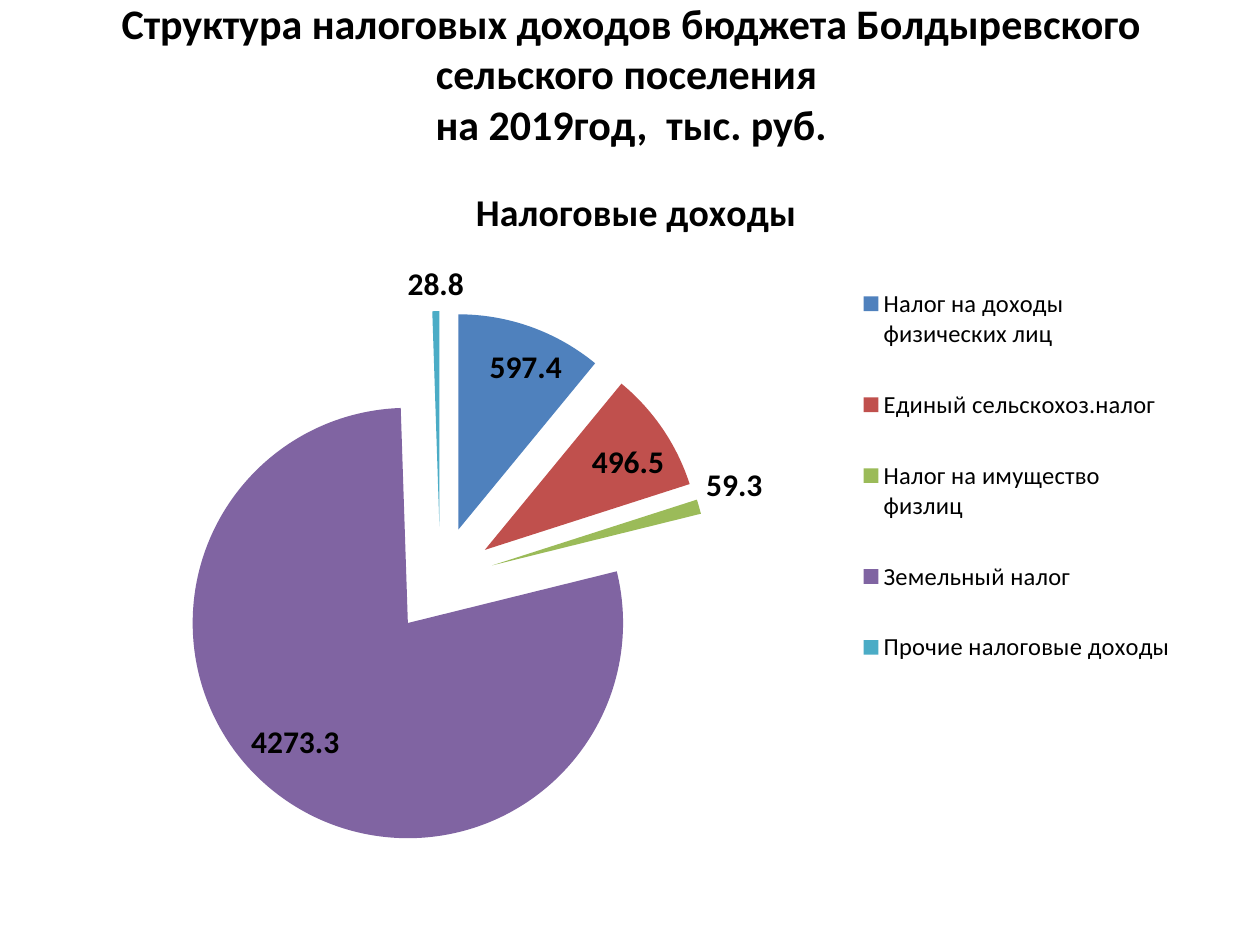
from dataclasses import dataclass

from lxml import etree
from pptx import Presentation
from pptx import util as u
from pptx.chart.data import CategoryChartData
from pptx.dml.color import RGBColor
from pptx.enum import chart as charts, text
from pptx.oxml.ns import qn

HEADING = ("Структура налоговых доходов бюджета Болдыревского сельского поселения \v"
           "на 2019год,  тыс. руб.")
CHART_TITLE = "Налоговые доходы"
TAXES = [
    ("Налог на доходы физических лиц", 597.4, "4F81BD"),
    ("Единый сельскохоз.налог", 496.5, "C0504D"),
    ("Налог на имущество физлиц", 59.3, "9BBB59"),
    ("Земельный налог", 4273.3, "8064A2"),
    ("Прочие налоговые доходы", 28.8, "4BACC6"),
]
EXPLOSION = 25

# left, top, width, height in inches; the last two count from the chart's corner
TITLE_BOX = (0.51, 0.2, 9, 0.76)
CHART_BOX = (0.55, 1.25, 9, 5.63)
PIE_AREA = (0.81, 1.22, 4.27, 4.27)
LEGEND_AREA = (6.26, 0.72, 2.52, 3.61)


@dataclass(frozen=True)
class Theme:
    font: str = "Calibri"
    ink: str = "000000"
    heading: float = 24
    chart_title: float = 21.6
    label: float = 18
    legend: float = 14


THEME = Theme()


def style(font, size, bold=False):
    font.name = THEME.font
    font.size = u.Pt(size)
    font.bold = bold
    font.color.rgb = RGBColor.from_string(THEME.ink)


def place(element, area, after=None, inner=False):
    """Fix a chart part at shares of the chart's size."""
    for old in element.findall(qn("c:layout")):
        element.remove(old)
    layout = etree.Element(qn("c:layout"))
    manual = etree.SubElement(layout, qn("c:manualLayout"))
    shares = [length / whole for length, whole in zip(area, CHART_BOX[2:] * 2)]
    settings = [("layoutTarget", "inner")] if inner else []
    settings += [("xMode", "edge"), ("yMode", "edge"), *zip("xywh", shares)]
    for tag, value in settings:
        etree.SubElement(manual, qn(f"c:{tag}")).set("val", str(value))
    if after is None:
        element.insert(0, layout)
    else:
        after.addnext(layout)


def add_heading(page):
    title = page.shapes.title
    title.left, title.top, title.width, title.height = map(u.Inches, TITLE_BOX)
    frame = title.text_frame
    frame.text = HEADING
    frame.word_wrap = True
    frame.auto_size = text.MSO_AUTO_SIZE.NONE
    frame.vertical_anchor = text.MSO_ANCHOR.MIDDLE
    para = frame.paragraphs[0]
    para.alignment = text.PP_ALIGN.CENTER
    for span in para.runs:
        style(span.font, THEME.heading, bold=True)


def add_pie(page):
    data = CategoryChartData(number_format="General")
    data.categories = [name for name, _, _ in TAXES]
    data.add_series(CHART_TITLE, [value for _, value, _ in TAXES])
    chart = page.shapes.add_chart(
        charts.XL_CHART_TYPE.PIE, *map(u.Inches, CHART_BOX), data).chart
    style(chart.font, THEME.label)

    chart.has_title = True
    frame = chart.chart_title.text_frame
    frame.text = CHART_TITLE
    style(frame.paragraphs[0].runs[0].font, THEME.chart_title, bold=True)
    chart.chart_title.include_in_layout = False

    chart.has_legend = True
    legend = chart.legend
    legend.position = charts.XL_LEGEND_POSITION.RIGHT
    legend.include_in_layout = False
    style(legend.font, THEME.legend)
    legend_xml = chart.element.find(f".//{qn('c:legend')}")
    place(legend_xml, LEGEND_AREA, after=legend_xml.find(qn("c:legendPos")))
    place(chart.element.find(f".//{qn('c:plotArea')}"), PIE_AREA, inner=True)

    plot = chart.plots[0]
    plot.vary_by_categories = True
    series = plot.series[0]
    for index, (_, _, color) in enumerate(TAXES):
        fill = series.points[index].format.fill
        fill.solid()
        fill.fore_color.rgb = RGBColor.from_string(color)
    explosion = etree.Element(qn("c:explosion"))
    explosion.set("val", str(EXPLOSION))
    series._element.find(qn("c:dPt")).addprevious(explosion)

    labels = series.data_labels
    labels.show_value = True
    labels.position = charts.XL_LABEL_POSITION.BEST_FIT
    style(labels.font, THEME.label, bold=True)


def main():
    deck = Presentation()
    deck.slide_width, deck.slide_height = u.Inches(10), u.Inches(7.5)
    page = deck.slides.add_slide(deck.slide_layouts[5])
    add_heading(page)
    add_pie(page)
    deck.save("out.pptx")


if __name__ == "__main__":
    main()
